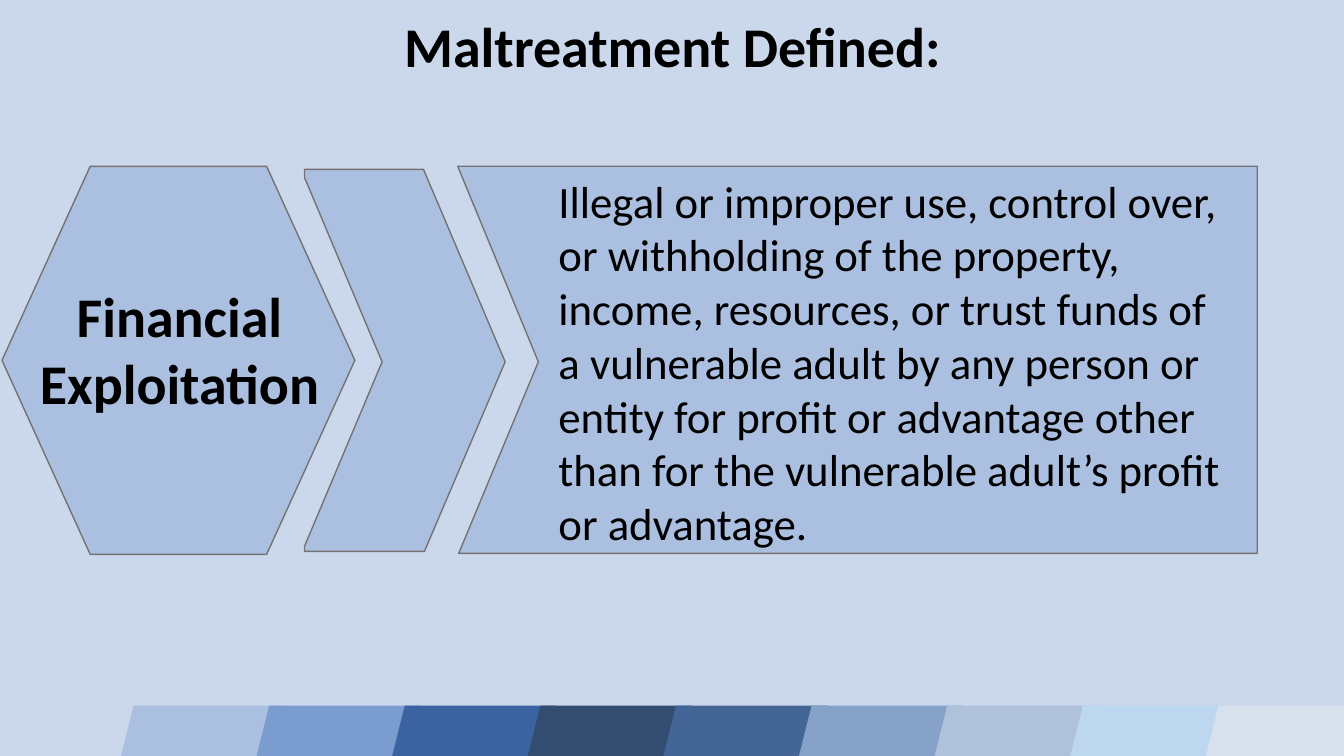
from pptx import Presentation
from pptx.dml.color import RGBColor
from pptx.enum.shapes import MSO_SHAPE
from pptx.enum.text import MSO_ANCHOR, MSO_AUTO_SIZE, PP_ALIGN
from pptx.util import Inches, Pt

BACKGROUND = "CBD8EC"
PANEL = "ABC0E0"
OUTLINE = "767171"
BLACK = "000000"
BAND_COLOURS = ["ABC0E0", "7B9CCF", "3B63A1", "334D71", "446696",
                "86A2C8", "AFC1DB", "BDD7EE", "D7E0ED"]


def colour(hex_string):
    return RGBColor.from_string(hex_string)


class SlideBuilder:
    def __init__(self, slide, font):
        self.slide = slide
        self.font = font

    def background(self, fill):
        self.slide.background.fill.solid()
        self.slide.background.fill.fore_color.rgb = colour(fill)

    def paint(self, shape, fill, line=None):
        shape.shadow.inherit = False
        shape.fill.solid()
        shape.fill.fore_color.rgb = colour(fill)
        if line:
            shape.line.color.rgb = colour(line)
            shape.line.width = Pt(1)
        else:
            shape.line.fill.background()
        return shape

    def preset(self, kind, box, fill, line=None):
        shape = self.slide.shapes.add_shape(kind, *map(Inches, box))
        return self.paint(shape, fill, line)

    def outline(self, points, fill, line):
        corners = [(Inches(x), Inches(y)) for x, y in points]
        builder = self.slide.shapes.build_freeform(*corners[0], scale=1.0)
        builder.add_line_segments(corners[1:], close=True)
        return self.paint(builder.convert_to_shape(), fill, line)

    def add_lines(self, shape, lines, size, bold=False, align=PP_ALIGN.LEFT,
                  anchor=MSO_ANCHOR.TOP, spacing=None):
        frame = shape.text_frame
        frame.word_wrap = True
        frame.vertical_anchor = anchor
        for index, line in enumerate(lines):
            paragraph = frame.add_paragraph() if index else frame.paragraphs[0]
            paragraph.alignment = align
            paragraph.line_spacing = spacing
            run = paragraph.add_run()
            run.text = line
            run.font.name = self.font
            run.font.size = Pt(size)
            run.font.bold = bold
            run.font.color.rgb = colour(BLACK)

    def text(self, box, lines, size, **style):
        label = self.slide.shapes.add_textbox(*map(Inches, box))
        self.add_lines(label, lines, size, **style)
        label.text_frame.auto_size = MSO_AUTO_SIZE.SHAPE_TO_FIT_TEXT


def main():
    presentation = Presentation()
    presentation.slide_width = Inches(13.33)
    presentation.slide_height = Inches(7.5)
    slide = presentation.slides.add_slide(presentation.slide_layouts[6])
    builder = SlideBuilder(slide, "Calibri")
    builder.background(BACKGROUND)

    # Band of slanted tiles along the bottom edge
    tile_step = (11.85 - 1.09) / (len(BAND_COLOURS) - 1)
    for index, fill in enumerate(BAND_COLOURS):
        builder.preset(MSO_SHAPE.PARALLELOGRAM,
                       (1.09 + tile_step * index, 7, 1.74, 0.94), fill)

    # Title
    title = builder.preset(MSO_SHAPE.RECTANGLE, (3.13, 0.14, 7.08, 0.7), BACKGROUND)
    builder.add_lines(title, ["Maltreatment Defined:"], 40, bold=True,
                      align=PP_ALIGN.CENTER, anchor=MSO_ANCHOR.BOTTOM, spacing=0.9)

    # Term in the hexagon
    builder.preset(MSO_SHAPE.HEXAGON, (0.02, 1.65, 3.5, 3.85), PANEL, OUTLINE)
    builder.text((0.19, 2.74, 3.18, 1.45), ["Financial", "Exploitation"], 40,
                 bold=True, align=PP_ALIGN.CENTER)

    # Chevron leading to the definition
    builder.outline([(3.02, 1.68), (4.2, 1.68), (5.01, 3.59), (4.21, 5.47),
                     (3.02, 5.47), (3.02, 5.42), (3.79, 3.59), (3.02, 1.76)],
                    PANEL, OUTLINE)

    # Definition in the notched panel
    builder.outline([(4.54, 1.65), (12.47, 1.65), (12.47, 5.49), (4.55, 5.49),
                     (5.34, 3.59)], PANEL, OUTLINE)
    builder.text((5.44, 1.67, 6.88, 3.87),
                 ["Illegal or improper use, control over, or withholding of the "
                  "property, income, resources, or trust funds of a vulnerable "
                  "adult by any person or entity for profit or advantage other "
                  "than for the vulnerable adult’s profit or advantage."], 32)

    presentation.save("out.pptx")


if __name__ == "__main__":
    main()
